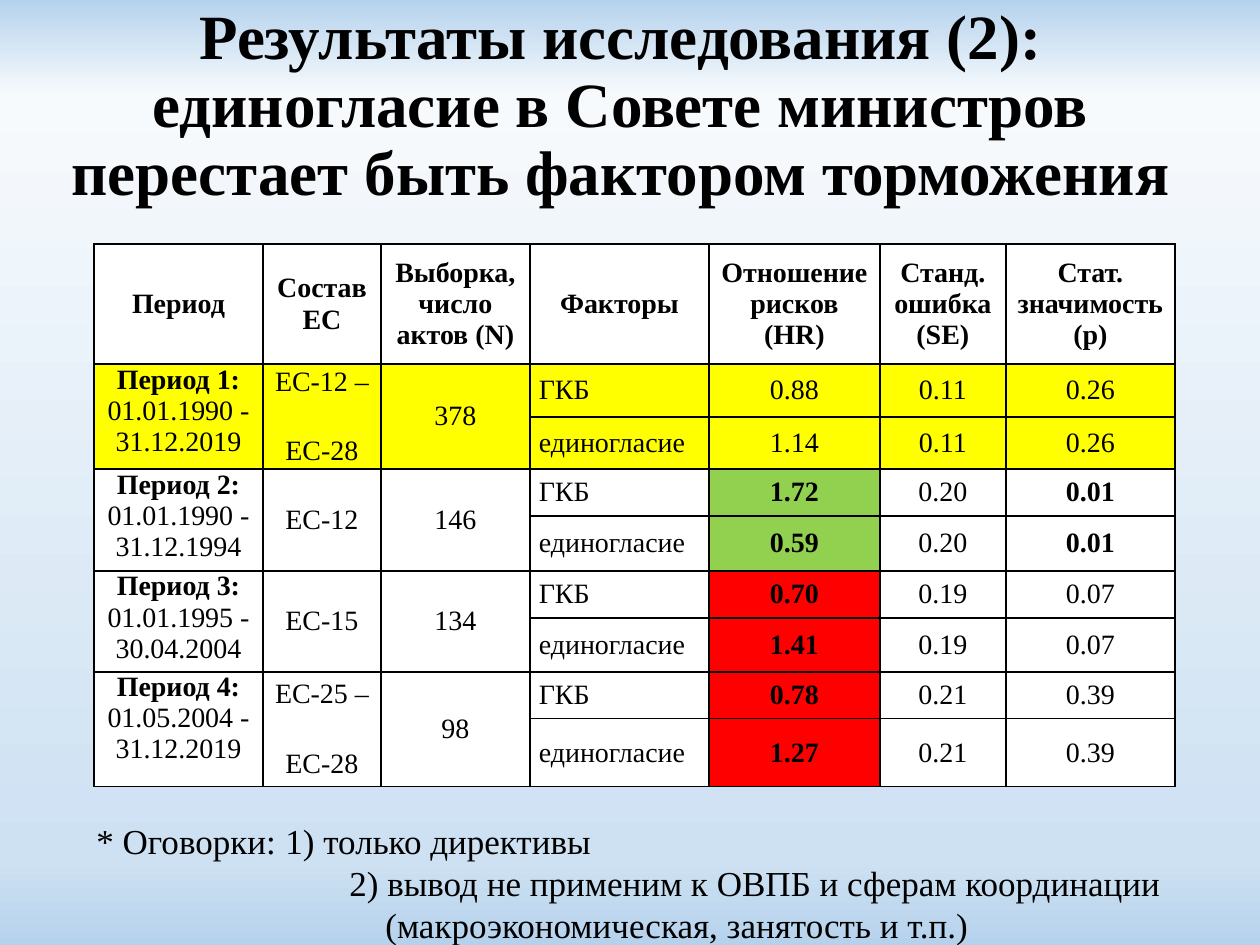
"""Build the slide on unanimity in the Council as a factor in the pace of adoption."""
from copy import deepcopy

from lxml.etree import SubElement
from pptx import Presentation
from pptx.dml.color import RGBColor
from pptx.enum.text import MSO_ANCHOR, PP_ALIGN
from pptx.oxml.ns import qn
from pptx.util import Emu, Pt

SCALE = 914400 / 126
WHITE, YELLOW, GREEN, RED = "FFFFFF", "FFFF00", "92D050", "FF0000"


def px(length):
    return Emu(round(length * SCALE))


def format_runs(paragraph, size, bold=False):
    for run in paragraph.runs:
        run.font.name = "Times New Roman"
        run.font.size = Pt(size)
        run.font.bold = bold
        run.font.color.rgb = RGBColor.from_string("000000")


presentation = Presentation()
presentation.slide_width = px(1260)
presentation.slide_height = px(945)
slide = presentation.slides.add_slide(presentation.slide_layouts[6])

background = slide.background.fill
background.gradient()
background.gradient_angle = 270
stop_list = background._fill._gradFill.find(qn("a:gsLst"))
for stop in list(stop_list)[:2]:
    stop_list.append(deepcopy(stop))
stop_values = [(0, "B5D2EC"), (0.1, "F7FAFD"), (0.91, "CEE1F2"), (1, "B5D2EC")]
for stop, (position, color) in zip(background.gradient_stops, stop_values):
    stop.position = position
    stop.color.rgb = RGBColor.from_string(color)

title = slide.shapes.add_textbox(px(15), px(0), px(1211), px(214))
title.text_frame.word_wrap = True
title.text_frame.vertical_anchor = MSO_ANCHOR.MIDDLE
title.text_frame.text = (
    "Результаты исследования (2): единогласие в Совете министров "
    "перестает быть фактором торможения"
)
paragraph = title.text_frame.paragraphs[0]
paragraph.alignment = PP_ALIGN.CENTER
paragraph.line_spacing = 0.9
format_runs(paragraph, 36, True)

headers = [
    "Период", "Состав ЕС", "Выборка, число актов (N)", "Факторы",
    "Отношение рисков (HR)", "Станд. ошибка (SE)", "Стат. значимость (p)",
]
periods = [
    ("01.01.1990 - 31.12.2019", "ЕС-12 – \vЕС-28", "378", ("0.88", "1.14"), "0.11", "0.26", YELLOW, YELLOW),
    ("01.01.1990 - 31.12.1994", "ЕС-12", "146", ("1.72", "0.59"), "0.20", "0.01", WHITE, GREEN),
    ("01.01.1995 - 30.04.2004", "ЕС-15", "134", ("0.70", "1.41"), "0.19", "0.07", WHITE, RED),
    ("01.05.2004 - 31.12.2019", "ЕС-25 – \vЕС-28", "98", ("0.78", "1.27"), "0.21", "0.39", WHITE, RED),
]
column_widths = [169, 118, 149, 179, 171, 126, 169]
row_heights = [120, 53, 48, 47, 55, 47, 51, 47, 68]

rows = [[(header, WHITE, True) for header in headers]]
for number, (dates, members, sample, ratios, error, p_value, fill, ratio_fill) in enumerate(periods, 1):
    for index, factor in enumerate(("ГКБ", "единогласие")):
        shared = [f"Период {number}: ", members, sample] if index == 0 else ["", "", ""]
        rows.append(
            [(text, fill, False) for text in shared + [factor]]
            + [(ratios[index], ratio_fill, ratio_fill != YELLOW),
               (error, fill, False),
               (p_value, fill, ratio_fill == GREEN)]
        )

table = slide.shapes.add_table(
    len(rows), len(headers), px(94), px(244), px(sum(column_widths)), px(sum(row_heights))
).table
for column, width in zip(table.columns, column_widths):
    column.width = px(width)
for row, height in zip(table.rows, row_heights):
    row.height = px(height)

for row_index, row in enumerate(rows):
    for column_index, (text, fill, bold) in enumerate(row):
        cell = table.cell(row_index, column_index)
        cell.margin_left = cell.margin_right = px(9)
        cell.margin_top = cell.margin_bottom = 0
        cell.vertical_anchor = MSO_ANCHOR.MIDDLE
        properties = cell._tc.get_or_add_tcPr()
        for side in ("a:lnL", "a:lnR", "a:lnT", "a:lnB"):
            line = SubElement(properties, qn(side), w=str(Pt(1)))
            SubElement(SubElement(line, qn("a:solidFill")), qn("a:srgbClr"), val="000000")
        cell.fill.solid()
        cell.fill.fore_color.rgb = RGBColor.from_string(fill)
        cell.text_frame.text = text
        paragraph = cell.text_frame.paragraphs[0]
        is_factor = row_index > 0 and column_index == 3
        paragraph.alignment = PP_ALIGN.JUSTIFY if is_factor else PP_ALIGN.CENTER
        format_runs(paragraph, 16, bold)

for index, period in enumerate(periods):
    top = 1 + 2 * index
    for column_index in range(3):
        table.cell(top, column_index).merge(table.cell(top + 1, column_index))
    cell = table.cell(top, 0)
    cell.vertical_anchor = MSO_ANCHOR.TOP
    paragraph = cell.text_frame.paragraphs[0]
    paragraph.add_run().text = period[0]
    format_runs(paragraph, 16)
    paragraph.runs[0].font.bold = True

notes = [
    ("* Оговорки: \t1) только директивы", 0),
    ("2) вывод не применим к ОВПБ и сферам координации", 253),
    ("(макроэкономическая, занятость и т.п.)", 289),
]
caveats = slide.shapes.add_textbox(px(84), px(813), px(1142), px(140))
caveats.text_frame.word_wrap = True
caveats.text_frame.text = "\n".join(text for text, indent in notes)
for paragraph, (text, indent) in zip(caveats.text_frame.paragraphs, notes):
    paragraph._p.get_or_add_pPr().set("marL", str(px(indent)))
    format_runs(paragraph, 20)

presentation.save("out.pptx")
